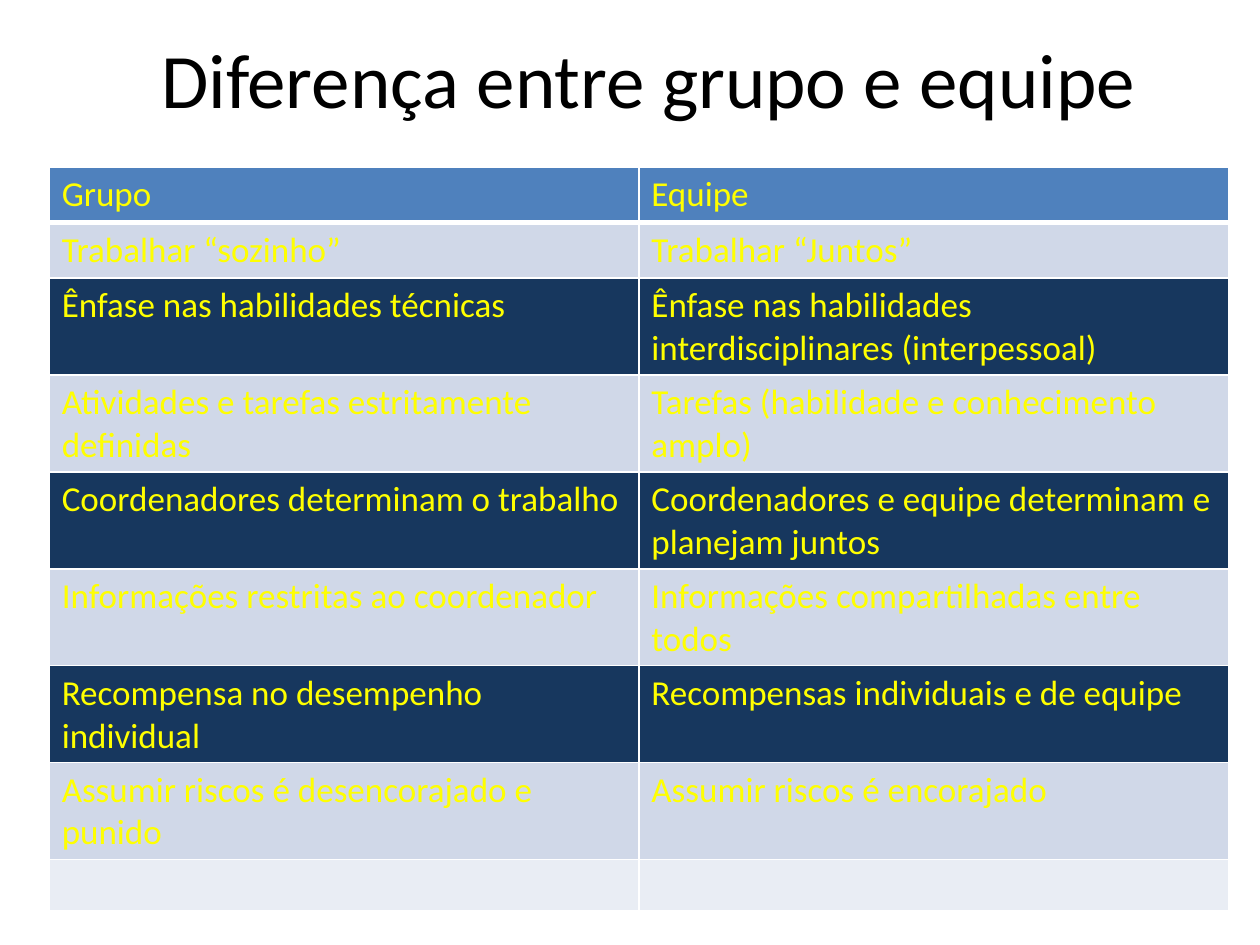
from dataclasses import dataclass

from pptx import Presentation
from pptx.dml.color import RGBColor as Rgb
from pptx.enum.text import MSO_ANCHOR as Anchor, PP_ALIGN as Align
from pptx.oxml.ns import qn
from pptx.util import Inches, Pt
from lxml.etree import SubElement


@dataclass(frozen=True)
class Theme:
    """Colours, type sizes and line widths of the slide."""
    font: str = "Calibri"
    title_size: int = 44
    cell_size: int = 20
    title_ink: str = "000000"
    cell_ink: str = "FFFF00"
    header: str = "4F81BD"
    light: str = "D0D8E8"
    dark: str = "17375E"
    closing: str = "E9EDF4"
    rule: str = "FFFFFF"
    thin: int = 1
    thick: int = 3


THEME = Theme()
WIDTH, HEIGHT = 10, 7.5
ONE_LINE, TWO_LINES, CLOSING = 0.44, 0.77, 0.41
TITLE = "Diferença entre grupo e equipe"
COMPARISON = [
    (ONE_LINE, "Grupo", "Equipe"),
    (ONE_LINE, "Trabalhar “sozinho”", "Trabalhar “Juntos”"),
    (TWO_LINES, "Ênfase nas habilidades técnicas",
     "Ênfase nas habilidades interdisciplinares (interpessoal)"),
    (TWO_LINES, "Atividades e tarefas estritamente definidas",
     "Tarefas (habilidade e conhecimento amplo)"),
    (TWO_LINES, "Coordenadores determinam o trabalho",
     "Coordenadores e equipe determinam e planejam juntos"),
    (ONE_LINE, "Informações restritas ao coordenador",
     "Informações compartilhadas entre todos"),
    (ONE_LINE, "Recompensa no desempenho individual",
     "Recompensas individuais e de equipe"),
    (TWO_LINES, "Assumir riscos é desencorajado e punido",
     "Assumir riscos é encorajado"),
    (CLOSING, "", ""),
]


def share(left, top, width, height):
    """Turn shares of the slide into lengths."""
    return [Inches(part * side) for part, side in
            zip((left, top, width, height), (WIDTH, HEIGHT) * 2)]


def style_text(paragraph, size, ink):
    """Set the type of a whole paragraph."""
    font = paragraph.font
    font.name, font.size, font.bold = THEME.font, Pt(size), False
    font.color.rgb = Rgb.from_string(ink)


def add_title(slide, wording):
    """Add the centred heading."""
    frame = slide.shapes.add_textbox(*share(0.055, 0.02, 0.92, 0.125)).text_frame
    frame.word_wrap = True
    frame.vertical_anchor = Anchor.MIDDLE
    heading = frame.paragraphs[0]
    heading.text = wording
    heading.alignment = Align.CENTER
    style_text(heading, THEME.title_size, THEME.title_ink)


def rule_cell(cell, bottom):
    """Draw the four borders of a cell."""
    properties = cell._tc.get_or_add_tcPr()
    for side, width in zip("LRTB", [THEME.thin] * 3 + [bottom]):
        line = SubElement(properties, qn(f"a:ln{side}"), w=str(Pt(width)))
        SubElement(SubElement(line, qn("a:solidFill")), qn("a:srgbClr"), val=THEME.rule)


def row_fill(index, last):
    """Choose the band colour of a row."""
    if index == 0:
        return THEME.header
    if index == last:
        return THEME.closing
    return THEME.light if index % 2 else THEME.dark


def add_comparison(slide, rows):
    """Add the two-column table."""
    box = share(0.039, 0.177, 0.936, 0.7)
    table = slide.shapes.add_table(len(rows), 2, *box).table
    for index, (height, *wordings) in enumerate(rows):
        table.rows[index].height = Inches(height)
        for cell, wording in zip(table.rows[index].cells, wordings):
            rule_cell(cell, THEME.thin if index else THEME.thick)
            cell.fill.solid()
            cell.fill.fore_color.rgb = Rgb.from_string(row_fill(index, len(rows) - 1))
            if wording:
                cell.text = wording
                style_text(cell.text_frame.paragraphs[0], THEME.cell_size, THEME.cell_ink)


def main():
    """Build and save the slide."""
    deck = Presentation()
    deck.slide_width, deck.slide_height = Inches(WIDTH), Inches(HEIGHT)
    slide = deck.slides.add_slide(deck.slide_layouts[6])
    add_title(slide, TITLE)
    add_comparison(slide, COMPARISON)
    deck.save("out.pptx")


if __name__ == "__main__":
    main()
